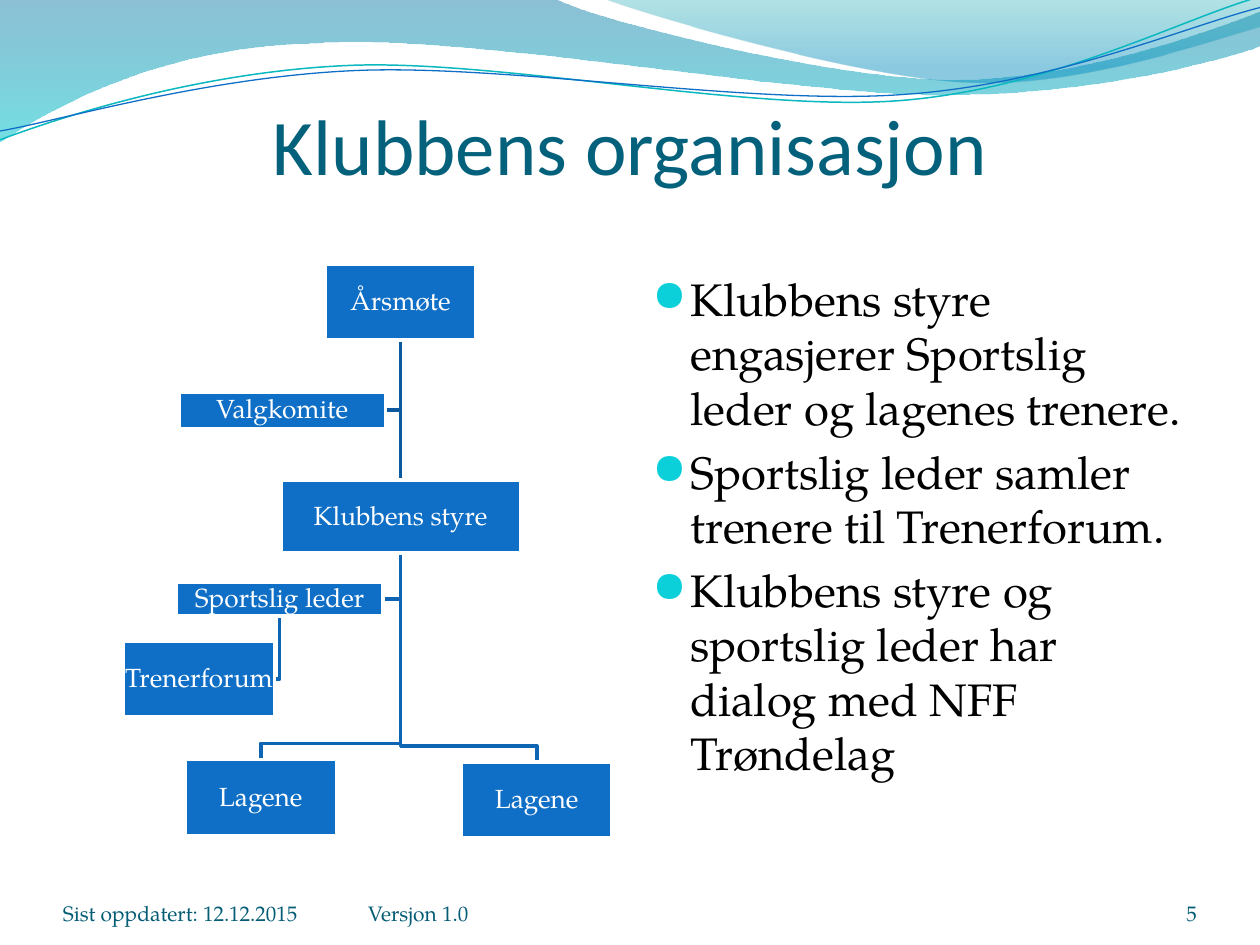
from dataclasses import dataclass

from lxml import etree
from pptx import Presentation
from pptx import util as u
from pptx.dml.color import RGBColor
from pptx.enum import shapes, text
from pptx.oxml.ns import qn

COLOURS = {
    "box": "0F6FC6", "white": "FFFFFF", "black": "000000", "title": "04617B",
    "footer": "045D75", "bullet": "0BD0D9", "trunk": "0C599F", "branch": "0E65B4",
    "teal": "0AB8BF", "wave_top": "0074A1", "wave_bottom": "00C6CF",
    "crest_top": "00A1A9", "crest_bottom": "008BBF",
}
BODY_FONT = "TeX Gyre Pagella"
BUS_GAP = 0.13

Point = tuple[float, float]


@dataclass
class Box:
    label: str
    left: float
    top: float
    width: float = 1.2
    height: float = 0.6

    @property
    def centre(self) -> float:
        return self.left + self.width / 2

    @property
    def middle(self) -> float:
        return self.top + self.height / 2

    @property
    def right(self) -> float:
        return self.left + self.width

    @property
    def bottom(self) -> float:
        return self.top + self.height


@dataclass
class Stop:
    position: float
    colour: str
    opacity: int


@dataclass
class Wave:
    """Start point, then segments of one point (line) or three (Bézier curve)."""
    start: Point
    segments: list[list[Point]]
    stops: tuple[Stop, ...] = ()
    colour: str = ""
    weight: float = 0


@dataclass
class Label:
    content: str
    left: float
    top: float
    width: float
    height: float
    size: float
    colour: str
    align: text.PP_ALIGN
    anchor: text.MSO_ANCHOR = text.MSO_ANCHOR.BOTTOM
    font: str = BODY_FONT
    margin_top: float = 0


WAVES = [
    Wave((0, 0), [
        [(4.4, -0.01)],
        [(4.76, 0.17), (6.64, 0.63), (7.58, 0.63)],
        [(8.53, 0.63), (9.58, 0.26), (10, 0.09)],
        [(10.01, 0.36)],
        [(9.83, 0.44), (8.7, 0.76), (7.46, 0.75)],
        [(6.22, 0.75), (3.82, 0.28), (2.57, 0.34)],
        [(1.29, 0.36), (0.46, 0.83), (-0.01, 1.13)],
    ], stops=(Stop(0, "wave_top", 45), Stop(1, "wave_bottom", 55))),
    Wave((4.79, -0.01), [
        [(5.09, 0.11), (6.82, 0.62), (7.69, 0.65)],
        [(8.56, 0.69), (9.61, 0.32), (10, 0.21)],
        [(10, 0)],
    ], stops=(Stop(0, "crest_top", 30), Stop(0.8, "crest_bottom", 45))),
    Wave((0, 1.11), [
        [(0.48, 0.93), (1.58, 0.57), (2.77, 0.52)],
        [(3.95, 0.47), (5.93, 0.89), (7.13, 0.8)],
        [(8.33, 0.71), (9.38, 0.15), (9.98, -0.02)],
    ], colour="teal", weight=0.85),
    Wave((0, 1.04), [
        [(0.47, 0.96), (1.64, 0.61), (2.83, 0.56)],
        [(4.03, 0.51), (5.97, 0.84), (7.17, 0.75)],
        [(8.36, 0.67), (9.41, 0.21), (10, 0.06)],
    ], colour="box", weight=0.75),
]

MEETING = Box("Årsmøte", 2.58, 2.1)
BOARD = Box("Klubbens styre", 2.23, 3.81, 1.9, 0.58)
TEAM_RIGHT = Box("Lagene", 3.66, 6.05)
TEAM_LEFT = Box("Lagene", 1.47, 6.03)
LEADER = Box("Sportslig leder", 1.4, 4.62, 1.64, 0.27)
FORUM = Box("Trenerforum", 0.98, 5.09)
COMMITTEE = Box("Valgkomite", 1.42, 3.11, 1.64, 0.29)
BOXES = [MEETING, BOARD, TEAM_RIGHT, TEAM_LEFT, LEADER, FORUM, COMMITTEE]
SIDE_LINKS = [(MEETING, COMMITTEE, "trunk"), (LEADER, FORUM, "branch"), (BOARD, LEADER, "branch")]

LABELS = [
    Label("Klubbens organisasjon", 0.5, 0.77, 9, 0.7, 45, "title", text.PP_ALIGN.CENTER,
          text.MSO_ANCHOR.MIDDLE, "Calibri", 0.05),
    Label("Sist oppdatert: 12.12.2015", 0.5, 6.95, 2.33, 0.4, 12, "footer", text.PP_ALIGN.LEFT),
    Label("Versjon 1.0", 2.92, 6.95, 3.67, 0.4, 12, "footer", text.PP_ALIGN.LEFT),
    Label("5", 8.67, 6.95, 0.83, 0.4, 12, "footer", text.PP_ALIGN.RIGHT),
]
BULLETS = [
    "Klubbens styre engasjerer Sportslig leder og lagenes trenere.",
    "Sportslig leder samler trenere til Trenerforum.",
    "Klubbens styre og sportslig leder har dialog med NFF Trøndelag",
]


def rgb(name: str) -> RGBColor:
    return RGBColor.from_string(COLOURS[name])


def style_font(paragraph, size: float, colour: str, font: str = BODY_FONT) -> None:
    paragraph.font.size = u.Pt(size)
    paragraph.font.name = font
    paragraph.font.color.rgb = rgb(colour)


def style_line(line, colour: str, weight: float) -> None:
    line.color.rgb = rgb(colour)
    line.width = u.Pt(weight)


def set_margins(frame, side: float, top: float) -> None:
    frame.margin_left = frame.margin_right = frame.margin_bottom = u.Inches(side)
    frame.margin_top = u.Inches(top)


def add_outline(slide, points: list[Point], close: bool = False):
    start, *rest = [(u.Inches(x), u.Inches(y)) for x, y in points]
    builder = slide.shapes.build_freeform(*start, scale=1.0)
    builder.add_line_segments(rest, close=close)
    shape = builder.convert_to_shape()
    shape.shadow.inherit = False
    return shape


def bend_segments(shape, segments: list[list[Point]]) -> None:
    """Turn the straight segments that have control points into Bézier curves."""
    for line, segment in zip(list(shape._element.iter(qn("a:lnTo"))), segments):
        if len(segment) == 1:
            continue
        curve = etree.Element(qn("a:cubicBezTo"))
        for x, y in segment:
            etree.SubElement(curve, qn("a:pt"), x=str(u.Inches(x) - shape.left),
                             y=str(u.Inches(y) - shape.top))
        line.getparent().replace(line, curve)


def add_wave(slide, wave: Wave) -> None:
    ends = [wave.start, *(segment[-1] for segment in wave.segments)]
    shape = add_outline(slide, ends, close=bool(wave.stops))
    bend_segments(shape, wave.segments)
    if not wave.stops:
        shape.fill.background()
        style_line(shape.line, wave.colour, wave.weight)
        return
    shape.line.fill.background()
    shape.fill.gradient()
    shape.fill.gradient_angle = 270
    for gradient_stop, stop in zip(shape.fill.gradient_stops, wave.stops):
        gradient_stop.position = stop.position
        gradient_stop.color.rgb = rgb(stop.colour)
    for colour, stop in zip(shape._element.spPr.iter(qn("a:srgbClr")), wave.stops):
        etree.SubElement(colour, qn("a:alpha"), val=str(stop.opacity * 1000))


def add_elbow(slide, points: list[Point], colour: str) -> None:
    shape = add_outline(slide, points)
    shape.fill.background()
    style_line(shape.line, colour, 2)


def add_box(slide, box: Box):
    shape = slide.shapes.add_shape(shapes.MSO_SHAPE.RECTANGLE, u.Inches(box.left),
                                   u.Inches(box.top), u.Inches(box.width), u.Inches(box.height))
    shape.shadow.inherit = False
    shape.fill.solid()
    shape.fill.fore_color.rgb = rgb("box")
    style_line(shape.line, "white", 2)
    frame = shape.text_frame
    frame.word_wrap = False
    frame.vertical_anchor = text.MSO_ANCHOR.MIDDLE
    set_margins(frame, 0.01, 0.01)
    paragraph = frame.paragraphs[0]
    paragraph.text = box.label
    paragraph.alignment = text.PP_ALIGN.CENTER
    paragraph.line_spacing = 0.9
    style_font(paragraph, 15, "white")
    return shape


def add_club_chart(slide) -> None:
    for parent, child, colour in SIDE_LINKS:
        add_elbow(slide, [(parent.centre, parent.bottom), (parent.centre, child.middle),
                          (child.right, child.middle)], colour)
    for team in (TEAM_LEFT, TEAM_RIGHT):
        bus = team.top - BUS_GAP
        add_elbow(slide, [(BOARD.centre, BOARD.bottom), (BOARD.centre, bus),
                          (team.centre, bus), (team.centre, team.top)], "branch")
    meeting, board, *_ = [add_box(slide, box) for box in BOXES]
    trunk = slide.shapes.add_connector(shapes.MSO_CONNECTOR.STRAIGHT, 0, 0, 0, 0)
    trunk.begin_connect(meeting, 2)
    trunk.end_connect(board, 0)
    style_line(trunk.line, "trunk", 2)
    etree.SubElement(trunk._element.spPr, qn("a:effectLst"))
    meeting._element.addprevious(trunk._element)


def add_text_frame(slide, left: float, top: float, width: float, height: float):
    shape = slide.shapes.add_textbox(*map(u.Inches, (left, top, width, height)))
    shape.text_frame.word_wrap = True
    return shape.text_frame


def add_label(slide, label: Label) -> None:
    frame = add_text_frame(slide, label.left, label.top, label.width, label.height)
    frame.vertical_anchor = label.anchor
    set_margins(frame, 0, label.margin_top)
    paragraph = frame.paragraphs[0]
    paragraph.text = label.content
    paragraph.alignment = label.align
    style_font(paragraph, label.size, label.colour, label.font)


def add_bullets(slide) -> None:
    frame = add_text_frame(slide, 5.08, 2.1, 4.42, 4.85)
    for index, content in enumerate(BULLETS):
        paragraph = frame.add_paragraph() if index else frame.paragraphs[0]
        paragraph.text = content
        if index:
            paragraph.space_before = u.Pt(5.2)
        properties = paragraph._p.get_or_add_pPr()
        properties.set("marL", str(u.Inches(0.3)))
        properties.set("indent", str(u.Inches(-0.3)))
        bullet_colour = etree.SubElement(properties, qn("a:buClr"))
        etree.SubElement(bullet_colour, qn("a:srgbClr"), val=COLOURS["bullet"])
        etree.SubElement(properties, qn("a:buSzPct"), val="95000")
        etree.SubElement(properties, qn("a:buFont"), typeface="OpenSymbol")
        etree.SubElement(properties, qn("a:buChar"), char="●")
        style_font(paragraph, 26, "black")


def main() -> None:
    presentation = Presentation()
    presentation.slide_width, presentation.slide_height = u.Inches(10), u.Inches(7.5)
    slide = presentation.slides.add_slide(presentation.slide_layouts[6])
    for wave in WAVES:
        add_wave(slide, wave)
    add_label(slide, LABELS[0])
    add_club_chart(slide)
    add_bullets(slide)
    for label in LABELS[1:]:
        add_label(slide, label)
    presentation.save("out.pptx")


if __name__ == "__main__":
    main()
